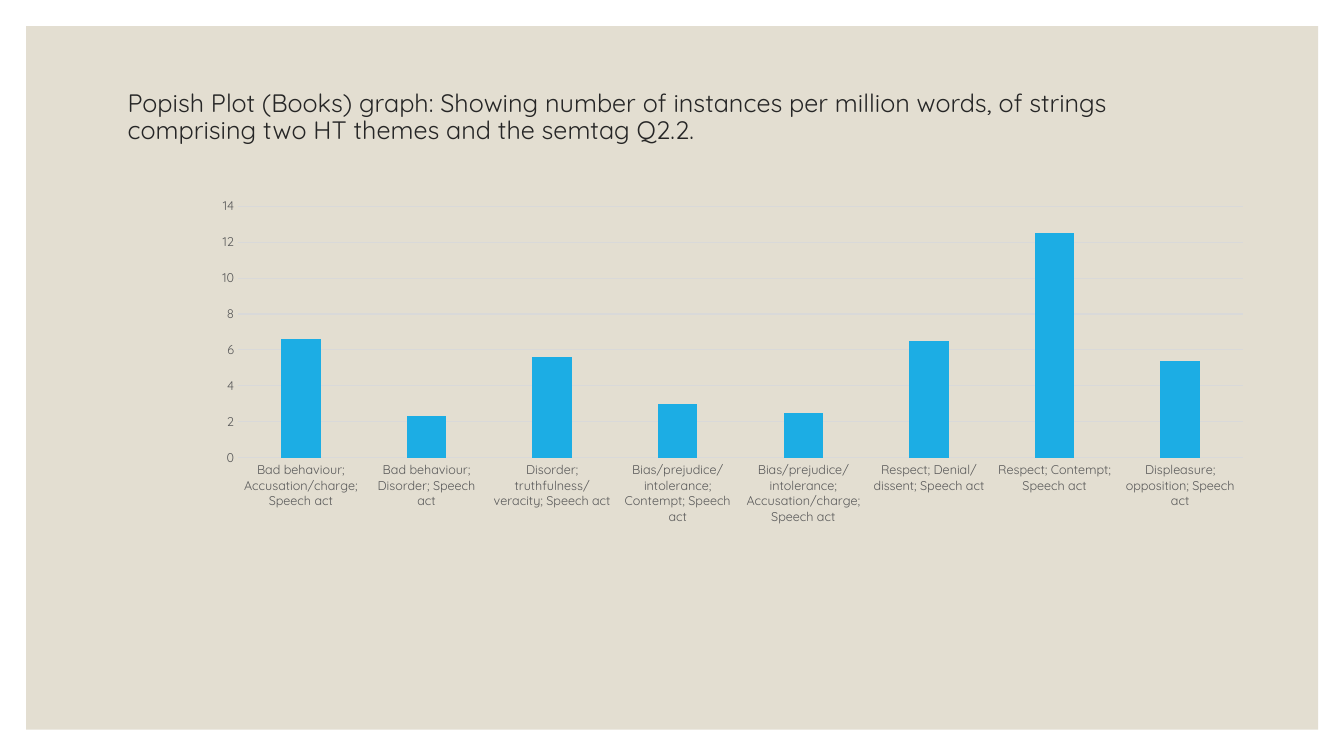
import pptx
import pptx.chart.data
import pptx.dml.color
import pptx.enum.chart
import pptx.enum.shapes
import pptx.enum.text
import pptx.oxml
import pptx.util
from pptx.util import Cm

FONT = "Quicksand"


def rgb(value):
    return pptx.dml.color.RGBColor.from_string(value)


def set_font(font, size, color):
    for name, value in {"name": FONT, "size": pptx.util.Pt(size)}.items():
        setattr(font, name, value)
    font.color.rgb = rgb(color)


prs = pptx.Presentation()
prs.slide_width, prs.slide_height = Cm(33.87), Cm(19.05)
s = prs.slides.add_slide(prs.slide_layouts[6])

panel = s.shapes.add_shape(
    pptx.enum.shapes.MSO_SHAPE.RECTANGLE, Cm(0.66), Cm(0.66), Cm(32.56), Cm(17.73))
panel.shadow.inherit = False
panel.fill.solid()
panel.fill.fore_color.rgb = rgb("E3DED1")
panel.line.fill.background()

title = s.shapes.add_textbox(Cm(2.97), Cm(1.78), Cm(27.94), Cm(2.39))
tf = title.text_frame
frame_format = {
    "word_wrap": True,
    "vertical_anchor": pptx.enum.text.MSO_ANCHOR.MIDDLE,
}
for name, value in frame_format.items():
    setattr(tf, name, value)
p = tf.paragraphs[0]
p.line_spacing = 0.9
r = p.add_run()
r.text = ("Popish Plot (Books) graph: Showing number of instances per million words, "
          "of strings comprising two HT themes and the semtag Q2.2.")
set_font(r.font, 18, "262626")

instances = {
    "Bad behaviour; Accusation/charge; Speech act": 6.6,
    "Bad behaviour; Disorder; Speech act": 2.3,
    "Disorder; truthfulness/veracity; Speech act": 5.6,
    "Bias/prejudice/intolerance; Contempt; Speech act": 3,
    "Bias/prejudice/intolerance; Accusation/charge; Speech act": 2.5,
    "Respect; Denial/dissent; Speech act": 6.5,
    "Respect; Contempt; Speech act": 12.5,
    "Displeasure; opposition; Speech act": 5.4,
}
data = pptx.chart.data.CategoryChartData()
data.categories = list(instances)
data.add_series("Series 1", list(instances.values()))
chart = s.shapes.add_chart(
    pptx.enum.chart.XL_CHART_TYPE.COLUMN_CLUSTERED,
    Cm(2.08), Cm(4.8), Cm(30.15), Cm(13.21), data).chart
chart.has_title = False
chart.has_legend = False
set_font(chart.font, 10, "000000")

plot = chart.plots[0]
for name, value in {"gap_width": 219, "overlap": -27, "vary_by_categories": False}.items():
    setattr(plot, name, value)
bars = plot.series[0].format.fill
bars.solid()
bars.fore_color.rgb = rgb("1CADE4")

cat_axis, val_axis = chart.category_axis, chart.value_axis
for axis in (cat_axis, val_axis):
    axis.major_tick_mark = axis.minor_tick_mark = pptx.enum.chart.XL_TICK_MARK.NONE
    set_font(axis.tick_labels.font, 9, "595959")
for name, value in {"minimum_scale": 0, "maximum_scale": 14, "major_unit": 2}.items():
    setattr(val_axis, name, value)
val_axis.format.line.fill.background()
for line in (cat_axis.format.line, val_axis.major_gridlines.format.line):
    line.color.rgb = rgb("D9D9D9")
    line.width = pptx.util.Pt(0.75)

plot_area = chart.plots[0]._element.getparent()
for layout in plot_area.findall(pptx.oxml.ns.qn("c:layout")):
    plot_area.remove(layout)
plot_area.insert(0, pptx.oxml.parse_xml(
    '<c:layout xmlns:c="http://schemas.openxmlformats.org/drawingml/2006/chart">'
    '<c:manualLayout><c:layoutTarget val="inner"/>'
    '<c:xMode val="edge"/><c:yMode val="edge"/>'
    '<c:x val="0.13"/><c:y val="0.03"/><c:w val="0.84"/><c:h val="0.48"/>'
    '</c:manualLayout></c:layout>'))

prs.save("out.pptx")
